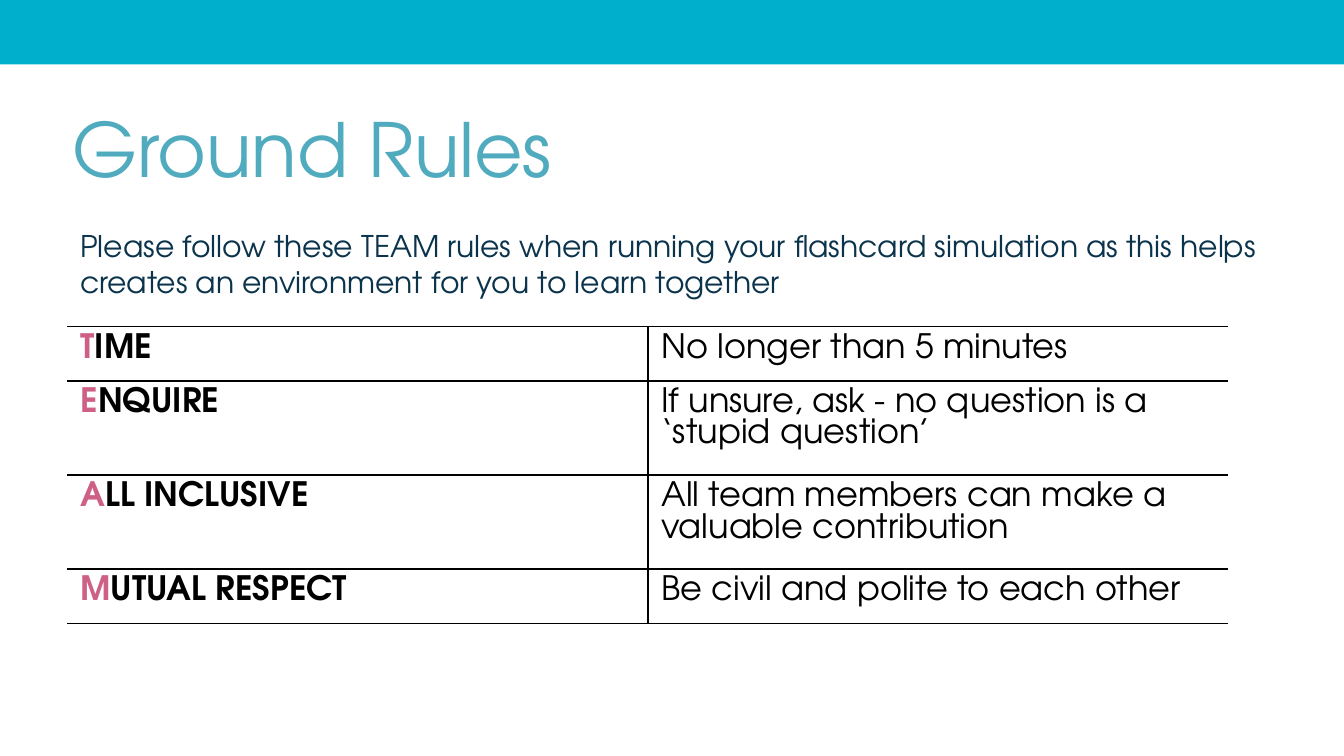
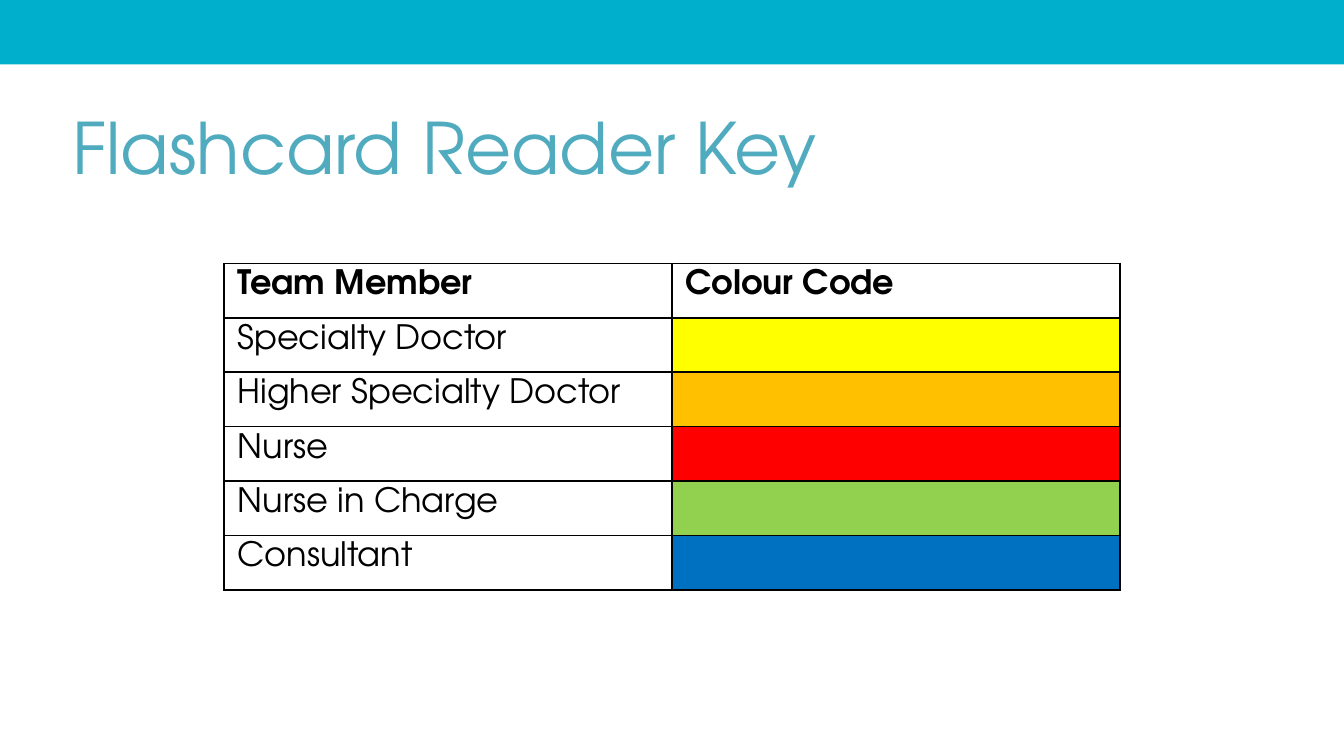
from pptx import Presentation
from pptx.dml.color import RGBColor
from pptx.enum.shapes import MSO_SHAPE
from pptx.enum.text import MSO_ANCHOR
from pptx.oxml.ns import qn
from pptx.util import Inches, Pt
from lxml import etree

RECT = MSO_SHAPE.RECTANGLE
TOP, MIDDLE = MSO_ANCHOR.TOP, MSO_ANCHOR.MIDDLE

FONT = "TeX Gyre Adventor"
COLORS = {
    "band": "00AFCB",
    "title": "50ABBF",
    "intro": "0B344C",
    "initial": "CD6084",
    "black": "000000",
}
WIDTH = 10
HEIGHT = WIDTH * 9 / 16
ROW_HEIGHT = 2.43 / 6
SIDES = {"l": "a:lnL", "r": "a:lnR", "t": "a:lnT", "b": "a:lnB"}


def rgb(name):
    return RGBColor.from_string(COLORS.get(name, name))


class Deck:
    def __init__(self):
        self.prs = Presentation()
        self.prs.slide_width = Inches(WIDTH)
        self.prs.slide_height = Inches(HEIGHT)
        self.s = None

    def slide(self):
        self.s = self.prs.slides.add_slide(self.prs.slide_layouts[6])
        sp = self.s.shapes.add_shape(RECT, 0, Inches(-0.01), Inches(WIDTH), Inches(0.49))
        sp.shadow.inherit = False
        sp.fill.solid()
        sp.fill.fore_color.rgb = rgb("band")
        sp.line.fill.background()

    def style(self, font, size, color, bold=False):
        font.name, font.size, font.bold = FONT, Pt(size), bold
        font.color.rgb = rgb(color)

    def text(self, text, x, y, w, h, size, color, anchor=TOP):
        tf = self.s.shapes.add_textbox(Inches(x), Inches(y), Inches(w), Inches(h)).text_frame
        tf.word_wrap = True
        tf.vertical_anchor = anchor
        p = tf.paragraphs[0]
        p.text = text
        self.style(p.font, size, color)

    def title(self, text, w, h, size):
        self.text(text, 0.44, 0.72, w, h, size, "title")

    def table(self, rows, x, y, w):
        """Add a two-column table and return it with unfilled cells."""
        n = len(rows)
        shape = self.s.shapes.add_table(n, 2, Inches(x), Inches(y), Inches(w),
                                        Inches(n * ROW_HEIGHT))
        table = shape.table
        table.first_row = table.horz_banding = False
        for i, row in enumerate(rows):
            for j, text in enumerate(row):
                cell = table.cell(i, j)
                cell.fill.background()
                p = cell.text_frame.paragraphs[0]
                p.text = text
                self.style(p.font, 18, "black")
        return table

    def borders(self, cell, sides):
        """Draw the given sides in black and leave the others open."""
        tcPr = cell._tc.get_or_add_tcPr()
        for i, (side, tag) in enumerate(SIDES.items()):
            ln = etree.Element(qn(tag), w=str(Pt(1)))
            if side in sides:
                fill = etree.SubElement(ln, qn("a:solidFill"))
                etree.SubElement(fill, qn("a:srgbClr"), val=COLORS["black"])
            else:
                etree.SubElement(ln, qn("a:noFill"))
            tcPr.insert(i, ln)


def ground_rules(deck):
    deck.slide()
    deck.text("Please follow these TEAM rules when running your flashcard simulation as this "
              "helps creates an environment for you to learn together",
              0.5, 1.49, 9, 0.94, 16, "intro", MIDDLE)
    rules = [
        ("TIME", "No longer than 5 minutes"),
        ("ENQUIRE", "If unsure, ask - no question is a ‘stupid question’"),
        ("ALL INCLUSIVE", "All team members can make a valuable contribution"),
        ("MUTUAL RESPECT", "Be civil and polite to each other"),
    ]
    table = deck.table(rules, 0.5, 2.43, 8.64)
    for i, (rule, _) in enumerate(rules):
        # Coloured first letter spells TEAM
        p = table.cell(i, 0).text_frame.paragraphs[0]
        p.clear()
        for part, color in ((rule[0], "initial"), (rule[1:], "black")):
            r = p.add_run()
            r.text = part
            deck.style(r.font, 18, color, bold=True)
        deck.borders(table.cell(i, 0), "trb")
        deck.borders(table.cell(i, 1), "ltb")
    deck.title("Ground Rules", 5, 0.77, 40)


def reader_key(deck):
    deck.slide()
    deck.title("Flashcard Reader Key", 7.33, 0.74, 38)
    members = {
        "Specialty Doctor": "FFFF00",
        "Higher Specialty Doctor": "FFC000",
        "Nurse": "FF0000",
        "Nurse in Charge": "92D050",
        "Consultant": "0070C0",
    }
    rows = [("Team Member", "Colour Code")] + [(member, "") for member in members]
    # Centred, two thirds of the slide wide
    table = deck.table(rows, WIDTH / 6, 1.96, WIDTH * 2 / 3)
    # Bold header row, then one colour per member
    for cell in table.rows[0].cells:
        cell.text_frame.paragraphs[0].font.bold = True
    for i, color in enumerate(members.values(), 1):
        fill = table.cell(i, 1).fill
        fill.solid()
        fill.fore_color.rgb = rgb(color)
    for cell in table.iter_cells():
        deck.borders(cell, "lrtb")


def main():
    deck = Deck()
    ground_rules(deck)
    reader_key(deck)
    deck.prs.save("out.pptx")


if __name__ == "__main__":
    main()
